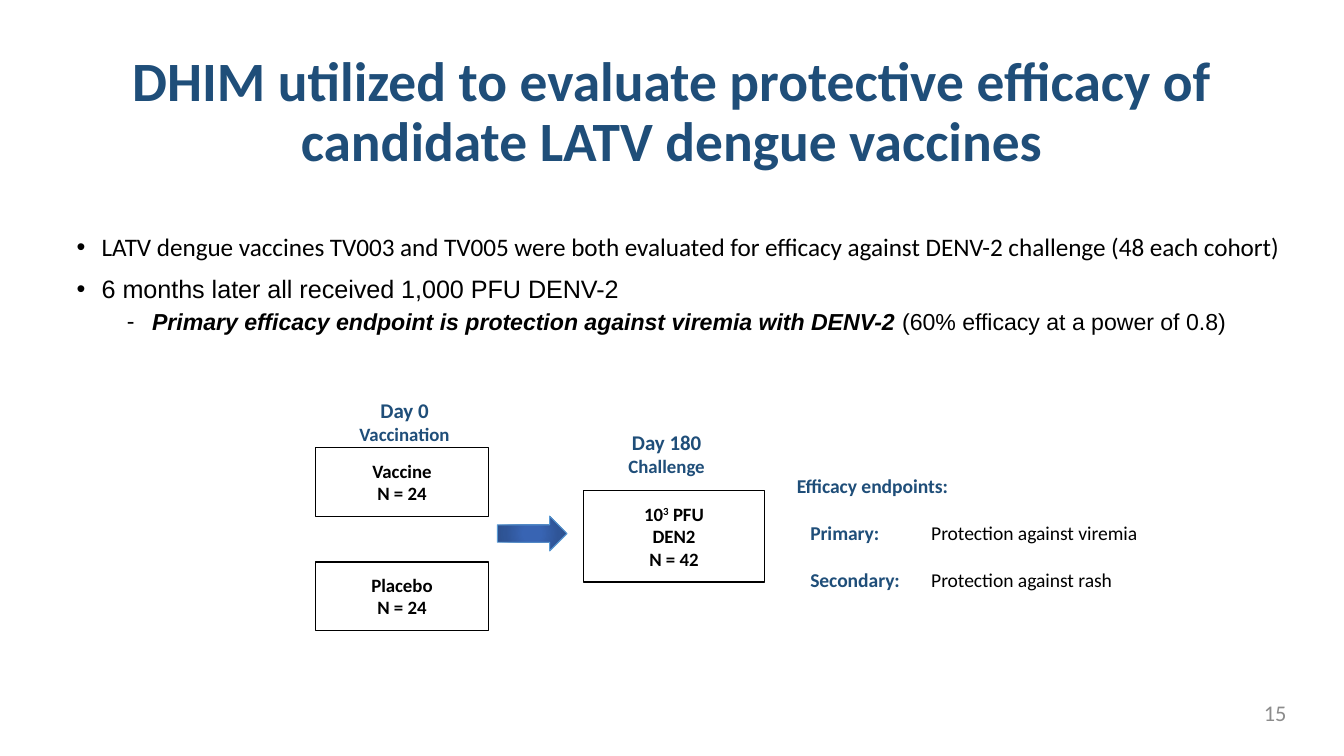
"""Build the slide on the dengue vaccine challenge study."""
from pptx import Presentation
from pptx.dml.color import RGBColor
from pptx.enum import shapes, text
from pptx.oxml import parse_xml
from pptx.oxml.ns import nsdecls
from pptx.util import Pt

HUES = {"navy": "1F4E79", "ink": "000000", "grey": "8C8C8C", "edge": "5B9BD5"}
GLOW = [(0, "3864B3"), (23, "3864B3"), (69, "2F5597"), (97, "2C4F8C")]
MID = text.PP_ALIGN.CENTER

TITLE = "DHIM utilized to evaluate protective efficacy of candidate LATV dengue vaccines"
POINTS = [
    (0, "•", 13.5, [("LATV dengue vaccines TV003 and TV005 were both evaluated for efficacy "
                     "against DENV-2 challenge (48 each cohort)", {"name": "Calibri"})]),
    (0, "•", 13.5, [("6 months later all received 1,000 PFU DENV-2", {"name": "Arial"})]),
    (1, "-", 12.4, [("Primary efficacy endpoint is protection against viremia with DENV-2 ",
                     {"name": "Arial", "bold": True, "italic": True}),
                    ("(60% efficacy at a power of 0.8)", {"name": "Arial"})]),
]
GROUPS = [
    ((169.2, 239.8, 92.4, 36.8), ["Vaccine", "N = 24"]),
    ((169.2, 301, 92.4, 36.8), ["Placebo", "N = 24"]),
    ((312.5, 262.8, 97.2, 49), ["10^3 PFU", "DEN2", "N = 42"]),
]
DAYS = [
    ((165.6, 209.5, 102.2, 33.1), "Day 0", "Vaccination"),
    ((312.5, 226.8, 89.3, 33.1), "Day 180", "Challenge"),
]
HEAD = "Efficacy endpoints:"
GOALS = [("Primary:", "Protection against viremia", 53.6),
         ("Secondary:", "Protection against rash", 71.8)]


def pts(box):
    return [Pt(n) for n in box]


def style(run, size, hue="ink", **opts):
    font = run.font
    font.size = Pt(size)
    font.color.rgb = RGBColor.from_string(HUES[hue])
    for key, val in {"name": "Calibri", "bold": False, "italic": False, **opts}.items():
        setattr(font, key, val)


def write(para, parts, size, hue="ink", **opts):
    for words, own in parts:
        run = para.add_run()
        run.text = words
        style(run, size, **{"hue": hue, **opts, **own})


def lines(frame, count):
    return [frame.paragraphs[0]] + [frame.add_paragraph() for _ in range(count - 1)]


def place(item, box):
    item.left, item.top, item.width, item.height = pts(box)
    item.text_frame.auto_size = text.MSO_AUTO_SIZE.NONE
    item.text_frame.word_wrap = True
    return item.text_frame


def label(slide, box):
    frame = slide.shapes.add_textbox(*pts(box)).text_frame
    frame.word_wrap = True
    return frame


def shape(slide, kind, box, hue, width):
    item = slide.shapes.add_shape(kind, *pts(box))
    item.shadow.inherit = False
    item.fill.background()
    item.line.color.rgb = RGBColor.from_string(HUES[hue])
    item.line.width = Pt(width)
    return item


def outline(slide):
    frame = place(slide.shapes.title, (49.7, 21.6, 620.6, 78.5))
    frame.vertical_anchor = text.MSO_ANCHOR.MIDDLE
    frame.text = TITLE
    para = frame.paragraphs[0]
    para.alignment, para.line_spacing = MID, 0.9
    style(para.runs[0], 29.7, "navy", bold=True)

    frame = place(slide.placeholders[1], (33.8, 122.4, 662.4, 267))
    for i, (para, (level, mark, size, parts)) in enumerate(zip(lines(frame, len(POINTS)), POINTS)):
        para.level, para.line_spacing = level, 0.9
        para.space_before = Pt((3.8 if level else 7.5) if i else 0)
        props = para._p.get_or_add_pPr()
        props.set("marL", str(Pt(13.5 + 27 * level)))
        props.set("indent", str(Pt(-13.5)))
        props.append(parse_xml(f'<a:buChar {nsdecls("a")} char="{mark}"/>'))
        write(para, parts, size)


def flow(slide):
    for box, rows in GROUPS:
        frame = shape(slide, shapes.MSO_SHAPE.RECTANGLE, box, "ink", 0.75).text_frame
        frame.vertical_anchor = text.MSO_ANCHOR.MIDDLE
        frame.margin_top = frame.margin_bottom = Pt(5.4)
        for para, row in zip(lines(frame, len(rows)), rows):
            para.alignment = MID
            base, _, rest = row.partition("^")
            parts = [(base, {})] + ([(rest[0], {}), (rest[1:], {})] if rest else [])
            write(para, parts, 10.1, bold=True)
            if rest:
                para.runs[1].font._element.set("baseline", "30000")

    for box, *rows in DAYS:
        for para, row, size in zip(lines(label(slide, box), 2), rows, (11.2, 10.1)):
            para.alignment = MID
            write(para, [(row, {})], size, "navy", bold=True)

    arrow = shape(slide, shapes.MSO_SHAPE.RIGHT_ARROW, (266.4, 276.5, 37.4, 18.7), "edge", 0.5)
    stops = "".join(f'<a:gs pos="{pos * 1000}"><a:srgbClr val="{hue}"/></a:gs>' for pos, hue in GLOW)
    grad = parse_xml(
        f'<a:gradFill {nsdecls("a")}><a:gsLst>{stops}</a:gsLst><a:path path="circle">'
        '<a:fillToRect l="50000" t="50000" r="50000" b="50000"/></a:path></a:gradFill>')
    props = arrow._element.spPr
    props.replace(props.find("{*}noFill"), grad)


def goals(slide):
    first, *rest = lines(label(slide, (419.8, 250.6, 230.4, 82.8)), 1 + len(GOALS))
    write(first, [(HEAD, {})], 10.5, "navy", bold=True)
    for para, (name, goal, stop) in zip(rest, GOALS):
        props = para._p.get_or_add_pPr()
        props.set("marL", "0")
        props.set("indent", str(Pt(7.2)))
        props.append(parse_xml(
            f'<a:tabLst {nsdecls("a")}><a:tab pos="{Pt(stop)}" algn="l"/></a:tabLst>'))
        para.space_before = Pt(12.4)
        write(para, [(name, {"hue": "navy", "bold": True}), ("\t" + goal, {})], 10.5)


def main():
    deck = Presentation()
    deck.slide_width, deck.slide_height = Pt(720), Pt(405)
    slide = deck.slides.add_slide(deck.slide_layouts[1])
    outline(slide)
    flow(slide)
    goals(slide)
    frame = label(slide, (574.6, 373.7, 121.7, 15.8))
    frame.vertical_anchor = text.MSO_ANCHOR.MIDDLE
    para = frame.paragraphs[0]
    para.alignment = text.PP_ALIGN.RIGHT
    write(para, [("15", {})], 12, "grey")
    deck.save("out.pptx")


if __name__ == "__main__":
    main()
